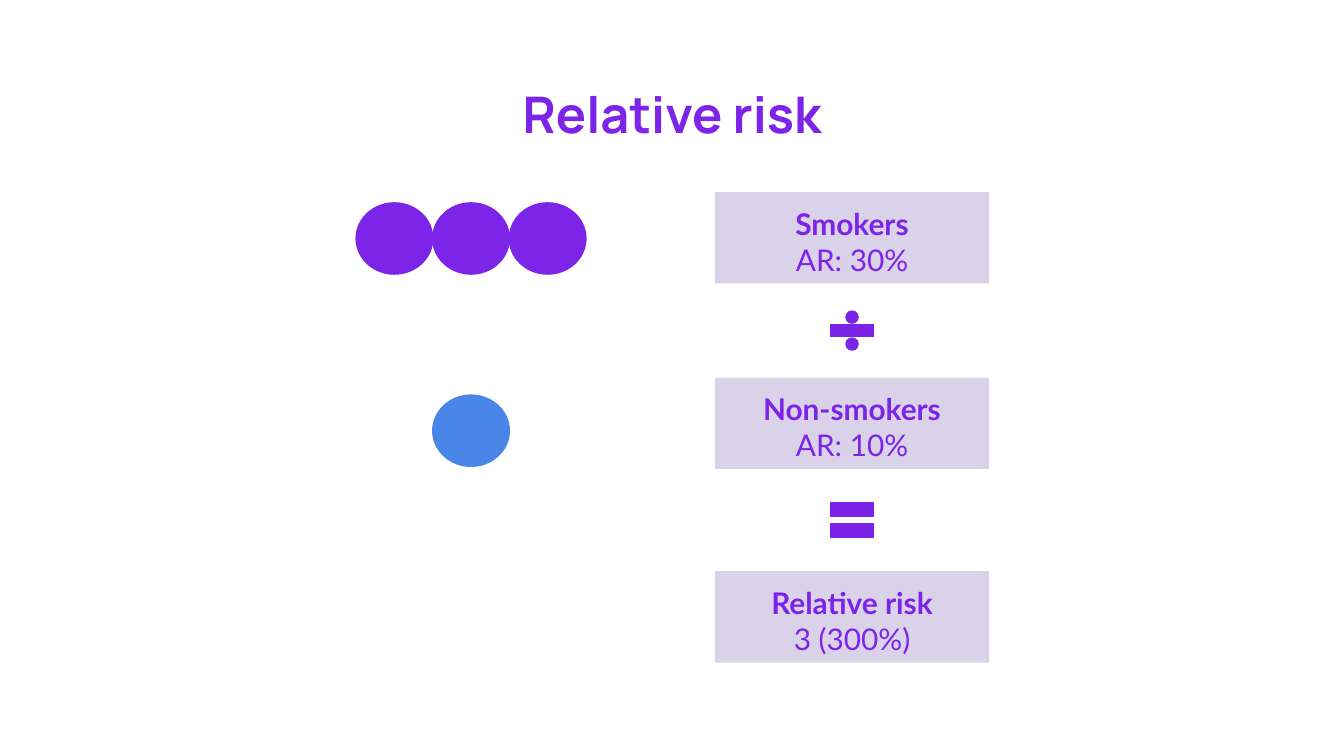
from lxml.etree import SubElement
from pptx import Presentation
from pptx.dml.color import RGBColor
from pptx.enum.shapes import MSO_SHAPE
from pptx.enum.text import MSO_ANCHOR, MSO_AUTO_SIZE, PP_ALIGN
from pptx.oxml.ns import qn
from pptx.util import Inches, Pt

PURPLE = "7C24E8"
SYMBOL_PURPLE = "7B23E7"
BLUE = "4A86E8"
LAVENDER = "D9D2E9"


def color(value):
    return RGBColor.from_string(value)


class RiskSlide:
    title_font = "Manrope"
    body_font = "Lato"
    text_color = PURPLE

    def __init__(self, deck):
        self.slide = deck.slides.add_slide(deck.slide_layouts[5])

    def format_text(self, frame, font_name, size, anchor):
        frame.word_wrap = True
        frame.auto_size = MSO_AUTO_SIZE.NONE
        frame.vertical_anchor = anchor
        frame.margin_left = frame.margin_right = Inches(0.1)
        frame.margin_top = frame.margin_bottom = Inches(0.1)
        for index, para in enumerate(frame.paragraphs):
            para.alignment = PP_ALIGN.CENTER
            for span in para.runs:
                span.font.name = font_name
                span.font.size = Pt(size)
                span.font.bold = index == 0
                span.font.color.rgb = color(self.text_color)

    def title(self, text, left, top, width, height):
        box = self.slide.shapes.title
        box.left, box.top = Inches(left), Inches(top)
        box.width, box.height = Inches(width), Inches(height)
        box.text_frame.text = text
        self.format_text(box.text_frame, self.title_font, 27, MSO_ANCHOR.BOTTOM)

    def shape(self, kind, left, top, width, height, fill, line=None, adjustments=()):
        shape = self.slide.shapes.add_shape(
            kind, Inches(left), Inches(top), Inches(width), Inches(height)
        )
        shape.shadow.inherit = False
        shape.fill.solid()
        shape.fill.fore_color.rgb = color(fill)
        if line:
            shape.line.color.rgb = color(line)
            shape.line.width = Pt(0.75)
            SubElement(shape.element.spPr.find(qn("a:ln")), qn("a:round"))
        else:
            shape.line.fill.background()
        for index, value in enumerate(adjustments):
            shape.adjustments[index] = value
        return shape

    def circle_row(self, count, top, fill, center=3.505, width=0.57):
        first_left = center - count * width / 2
        for index in range(count):
            left = first_left + index * width
            self.shape(MSO_SHAPE.OVAL, left, top, width, 0.53, fill, fill)

    def risk_box(self, heading, value, top):
        box = self.shape(MSO_SHAPE.RECTANGLE, 5.32, top, 2.04, 0.68, LAVENDER)
        box.text_frame.text = f"{heading}\n{value}"
        self.format_text(box.text_frame, self.body_font, 16, MSO_ANCHOR.TOP)

    def symbol(self, kind, top, height, adjustments):
        self.shape(
            kind, 6.12, top, 0.44, height, SYMBOL_PURPLE, SYMBOL_PURPLE, adjustments
        )


def main():
    deck = Presentation()
    deck.slide_width = Inches(10)
    deck.slide_height = deck.slide_width * 9 // 16

    page = RiskSlide(deck)
    page.title("Relative risk", 0.34, 0.49, 9.32, 0.68)
    page.circle_row(3, 1.51, PURPLE)
    page.circle_row(1, 2.94, BLUE)
    page.risk_box("Smokers", "AR: 30%", 1.43)
    page.risk_box("Non-smokers", "AR: 10%", 2.81)
    page.symbol(MSO_SHAPE.MATH_DIVIDE, 2.27, 0.38, (0.235, 0.059, 0.118))
    page.symbol(MSO_SHAPE.MATH_EQUAL, 3.65, 0.44, (0.235, 0.118))
    page.risk_box("Relative risk", "3 (300%)", 4.25)

    deck.save("out.pptx")


if __name__ == "__main__":
    main()
